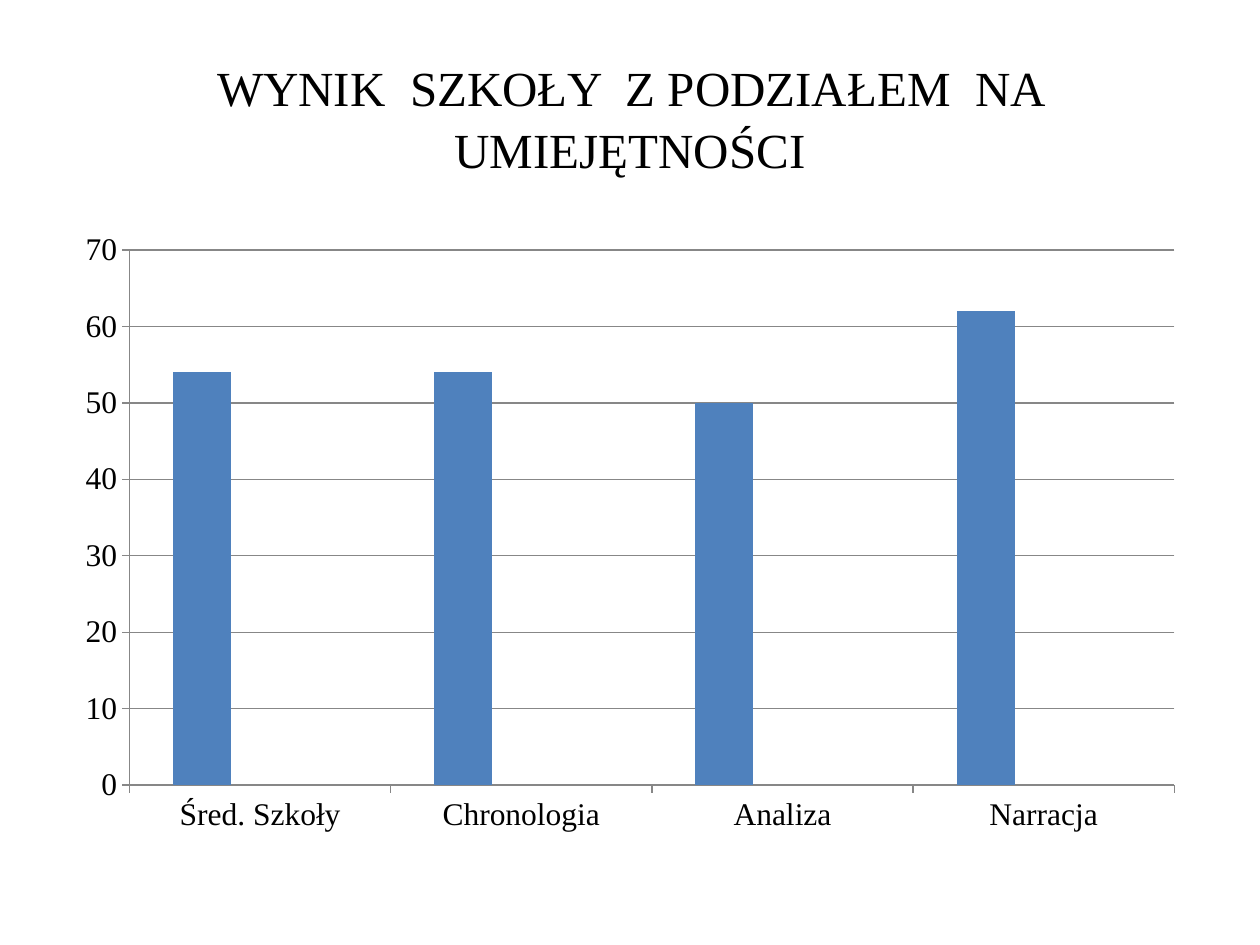
"""Build a slide with a school result column chart split by skill."""
from dataclasses import dataclass

import pptx
import pptx.chart.data
import pptx.dml.color
import pptx.enum.chart
import pptx.enum.text
import pptx.util
from pptx.util import Inches


@dataclass(frozen=True)
class Theme:
    """Colours and type sizes of the slide."""
    font: str = "Times New Roman"
    text: str = "000000"
    grid: str = "878787"
    series: tuple = ("4F81BD", "C0504D", "9BBB59")
    title_size: int = 28
    chart_size: int = 18
    line_width: float = 0.75


THEME = Theme()
TITLE = "WYNIK  SZKOŁY  Z PODZIAŁEM  NA UMIEJĘTNOŚCI"
SKILLS = ("Śred. Szkoły", "Chronologia", "Analiza", "Narracja")
RESULTS = {
    "Series 1": (54, 54, 50, 62),
    "Series 2": (None,) * len(SKILLS),
    "Series 3": (None,) * len(SKILLS),
}


def apply_format(target, values):
    """Set each named attribute of the target."""
    for name, value in values.items():
        setattr(target, name, value)


def colour(code):
    """Return the colour for a hex code."""
    return pptx.dml.color.RGBColor.from_string(code)


def style_font(font, size):
    """Give a font the theme's face and colour."""
    apply_format(font, {"name": THEME.font, "size": pptx.util.Pt(size), "bold": False})
    font.color.rgb = colour(THEME.text)


def style_line(line):
    """Give an axis or grid line the theme's colour and width."""
    line.color.rgb = colour(THEME.grid)
    line.width = pptx.util.Pt(THEME.line_width)


def add_title(page, text):
    """Add the centred heading."""
    box = page.shapes.add_textbox(Inches(0.5), Inches(0.3), Inches(9), Inches(1.25))
    frame = box.text_frame
    apply_format(frame, {
        "word_wrap": True,
        "vertical_anchor": pptx.enum.text.MSO_ANCHOR.MIDDLE,
    })
    para = frame.paragraphs[0]
    apply_format(para, {"alignment": pptx.enum.text.PP_ALIGN.CENTER, "line_spacing": 1.05})
    span = para.add_run()
    span.text = text
    style_font(span.font, THEME.title_size)


def add_column_chart(page, categories, results):
    """Add the clustered column chart."""
    data = pptx.chart.data.CategoryChartData()
    data.categories = categories
    for name, values in results.items():
        data.add_series(name, values)
    chart = page.shapes.add_chart(
        pptx.enum.chart.XL_CHART_TYPE.COLUMN_CLUSTERED,
        Inches(0.5), Inches(1.75), Inches(9), Inches(4.95), data).chart
    apply_format(chart, {"has_legend": False, "has_title": False})
    style_font(chart.font, THEME.chart_size)
    plot = chart.plots[0]
    apply_format(plot, {"gap_width": 150, "overlap": 0, "vary_by_categories": False})
    for series, code in zip(plot.series, THEME.series):
        series.format.fill.solid()
        series.format.fill.fore_color.rgb = colour(code)
    for axis in (chart.category_axis, chart.value_axis):
        axis.major_tick_mark = pptx.enum.chart.XL_TICK_MARK.OUTSIDE
        style_line(axis.format.line)
    apply_format(chart.value_axis, {
        "minimum_scale": 0,
        "maximum_scale": 70,
        "major_unit": 10,
        "has_major_gridlines": True,
    })
    style_line(chart.value_axis.major_gridlines.format.line)


def main():
    """Build and save the deck."""
    deck = pptx.Presentation()
    apply_format(deck, {"slide_width": Inches(10), "slide_height": Inches(7.5)})
    page = deck.slides.add_slide(deck.slide_layouts[6])
    add_title(page, TITLE)
    add_column_chart(page, SKILLS, RESULTS)
    deck.save("out.pptx")


if __name__ == "__main__":
    main()
